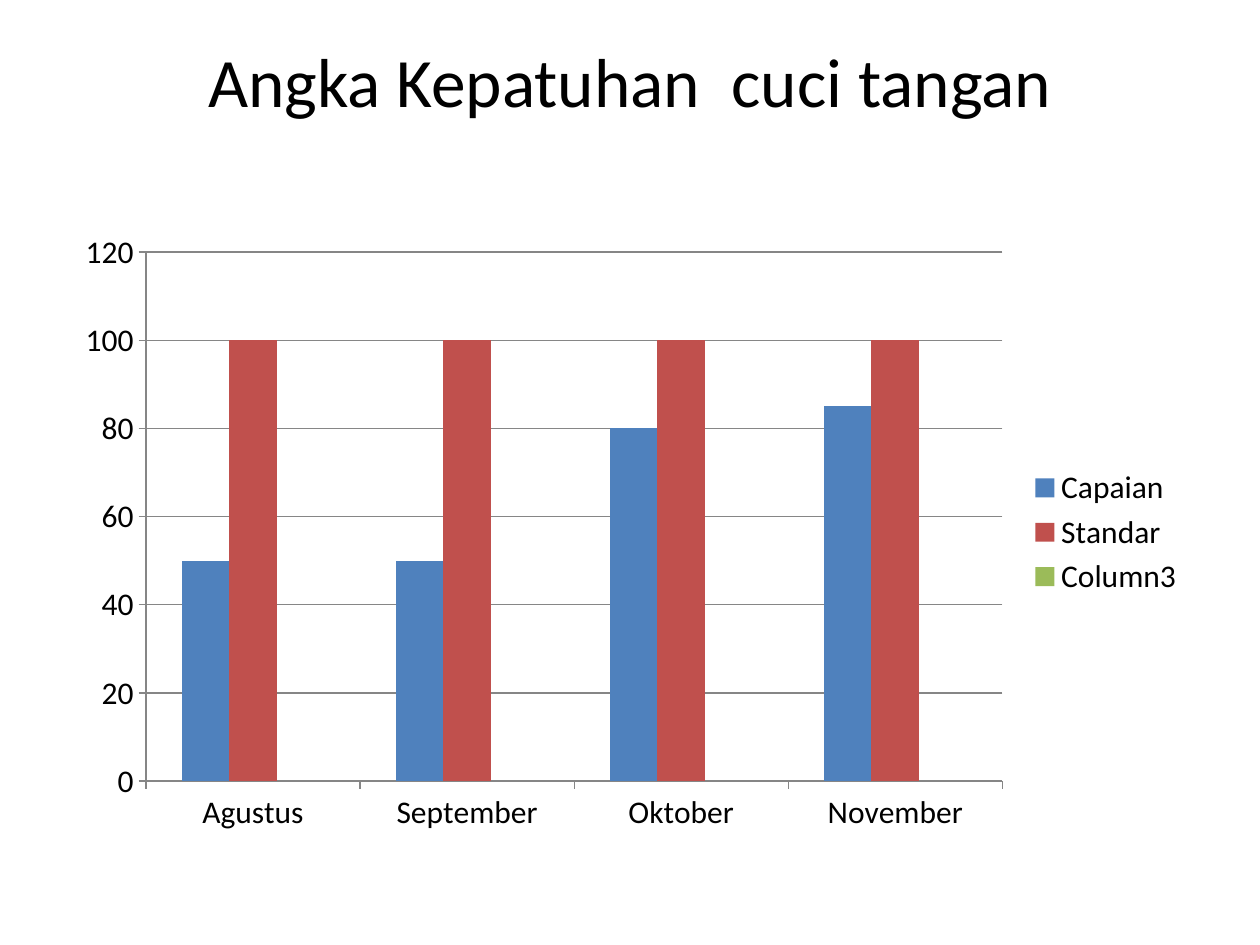
from pptx import Presentation
from pptx.chart.data import CategoryChartData
from pptx.dml.color import RGBColor
from pptx.enum.chart import XL_CHART_TYPE as Kind, XL_LEGEND_POSITION as Side, XL_TICK_MARK as Tick
from pptx.enum.text import MSO_ANCHOR as Anchor, PP_ALIGN as Align
from pptx.util import Inches, Pt

BLACK = RGBColor(0x00, 0x00, 0x00)
GREY = RGBColor(0x86, 0x86, 0x86)
BLUE = RGBColor(0x4F, 0x81, 0xBD)
RED = RGBColor(0xC0, 0x50, 0x4D)
GREEN = RGBColor(0x9B, 0xBB, 0x59)
FACE = "Calibri"

deck = Presentation()
deck.slide_width, deck.slide_height = Inches(10), Inches(7.5)
wide, high = deck.slide_width, deck.slide_height
slide = deck.slides.add_slide(deck.slide_layouts[6])

# Shared column for title and chart
left, span = int(wide * 0.05), int(wide * 0.9)


def add_text(text, top, tall, size=18, color=BLACK, align=Align.CENTER):
    box = slide.shapes.add_textbox(left, int(high * top), span, int(high * tall))
    frame = box.text_frame
    frame.word_wrap = True
    frame.vertical_anchor = Anchor.TOP
    frame.margin_top = frame.margin_bottom = 0
    line = frame.paragraphs[0]
    line.alignment = align
    run = line.add_run()
    run.text = text
    run.font.name, run.font.size = FACE, Pt(size)
    run.font.color.rgb = color


# Title
add_text("Angka Kepatuhan  cuci tangan", 0.04, 1 / 6, size=39.6)

# Chart data
rows = [
    ("Capaian", [50, 50, 80, 85], BLUE),
    ("Standar", [100] * 4, RED),
    ("Column3", [None] * 4, GREEN),
]
data = CategoryChartData()
data.categories = ["Agustus", "September", "Oktober", "November"]
for name, vals, _ in rows:
    data.add_series(name, vals)

# Column chart
chart = slide.shapes.add_chart(
    Kind.COLUMN_CLUSTERED, left, int(high * 0.2333), span, int(high * 0.66), data
).chart
chart.has_title = False
chart.font.name, chart.font.size = FACE, Pt(18)
chart.font.color.rgb = BLACK
plot = chart.plots[0]
plot.gap_width, plot.overlap = 150, 0
plot.vary_by_categories = False
for bar, (_, _, color) in zip(plot.series, rows):
    bar.format.fill.solid()
    bar.format.fill.fore_color.rgb = color
    bar.invert_if_negative = False

# Axes and grid
grid = chart.value_axis
grid.minimum_scale, grid.maximum_scale, grid.major_unit = 0, 120, 20
grid.has_major_gridlines = True
for axis in (chart.category_axis, grid):
    axis.major_tick_mark, axis.minor_tick_mark = Tick.OUTSIDE, Tick.NONE
for part in (chart.category_axis, grid, grid.major_gridlines):
    part.format.line.color.rgb = GREY
    part.format.line.width = Pt(0.75)

# Legend
chart.has_legend = True
chart.legend.position = Side.RIGHT
chart.legend.include_in_layout = False

deck.save("out.pptx")
